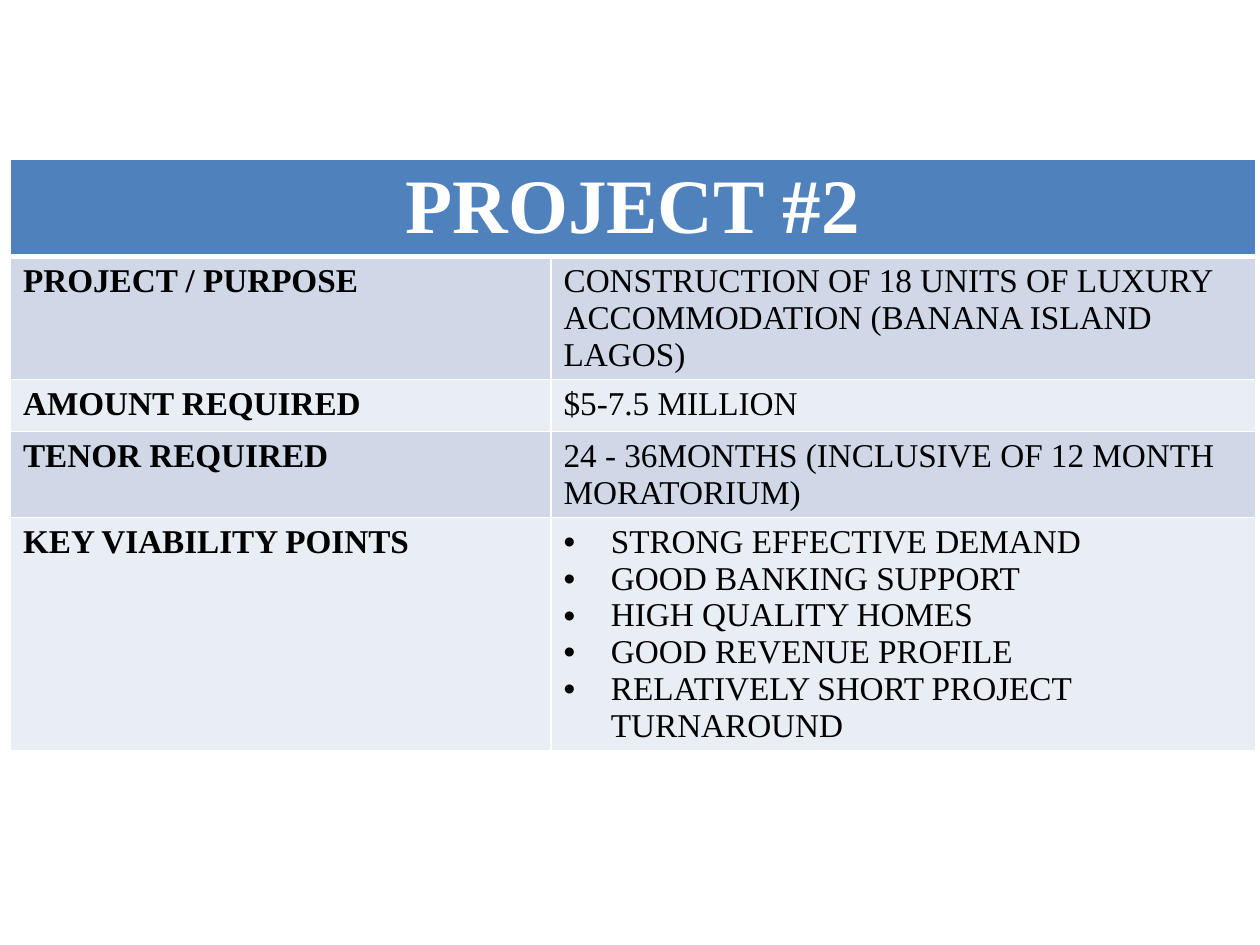
"""Build the PROJECT #2 summary table slide."""
import pptx
import pptx.dml.color
import pptx.enum.text
import pptx.oxml
import pptx.oxml.ns
import pptx.util

Pt = pptx.util.Pt


def color(value):
    return pptx.dml.color.RGBColor.from_string(value)


def style_cell(cell, lines, fill, size, bold, text_color, bottom=1):
    cell.fill.solid()
    cell.fill.fore_color.rgb = color(fill)
    cell.text = "\n".join(lines)
    for paragraph in cell.text_frame.paragraphs:
        paragraph.font.name = "Times New Roman"
        paragraph.font.size = Pt(size)
        paragraph.font.bold = bold
        paragraph.font.color.rgb = color(text_color)
    properties = cell._tc.get_or_add_tcPr()
    for index, (side, width) in enumerate([("L", 1), ("R", 1), ("T", 1), ("B", bottom)]):
        properties.insert(index, pptx.oxml.parse_xml(
            f'<a:ln{side} {pptx.oxml.ns.nsdecls("a")} w="{Pt(width)}"><a:solidFill>'
            f'<a:srgbClr val="FFFFFF"/></a:solidFill></a:ln{side}>'))


presentation = pptx.Presentation()
presentation.slide_width = Pt(720)
presentation.slide_height = Pt(540)
slide = presentation.slides.add_slide(presentation.slide_layouts[6])

project_rows = [
    ("PROJECT / PURPOSE", ["CONSTRUCTION OF 18 UNITS OF LUXURY ACCOMMODATION (BANANA ISLAND LAGOS)"]),
    ("AMOUNT REQUIRED", ["$5-7.5 MILLION"]),
    ("TENOR REQUIRED", ["24 - 36MONTHS (INCLUSIVE OF 12 MONTH MORATORIUM)"]),
    ("KEY VIABILITY POINTS", [
        "STRONG EFFECTIVE DEMAND",
        "GOOD BANKING SUPPORT",
        "HIGH QUALITY HOMES",
        "GOOD REVENUE PROFILE",
        "RELATIVELY SHORT PROJECT TURNAROUND",
    ]),
]
row_heights = [55.6, 70.2, 29.5, 49.2, 133.2]
column_widths = [308.9, 402.5]

table = slide.shapes.add_table(
    len(row_heights), 2, Pt(6), Pt(90.8), Pt(sum(column_widths)), Pt(sum(row_heights))).table
for row, height in zip(table.rows, row_heights):
    row.height = Pt(height)
for column, width in zip(table.columns, column_widths):
    column.width = Pt(width)

title_cell = table.cell(0, 0)
title_cell.merge(table.cell(0, 1))
style_cell(title_cell, ["PROJECT #2"], "4F81BD", 44, True, "FFFFFF", bottom=3)
title_cell.text_frame.paragraphs[0].alignment = pptx.enum.text.PP_ALIGN.CENTER

for number, (label, details) in enumerate(project_rows, start=1):
    fill = "D0D8E8" if number % 2 else "E9EDF4"
    style_cell(table.cell(number, 0), [label], fill, 19, True, "000000")
    style_cell(table.cell(number, 1), details, fill, 19, False, "000000")

for row in list(table.rows)[1:2]:
    for cell in row.cells:
        cell._tc.tcPr.find(pptx.oxml.ns.qn("a:lnT")).set("w", str(Pt(3)))

for paragraph in table.cell(len(project_rows), 1).text_frame.paragraphs:
    properties = paragraph._p.get_or_add_pPr()
    properties.set("marL", str(Pt(27)))
    properties.set("indent", str(-Pt(27)))
    for position, bullet in enumerate(['buFont typeface="Arial"', 'buChar char="•"']):
        properties.insert(position, pptx.oxml.parse_xml(
            f'<a:{bullet} {pptx.oxml.ns.nsdecls("a")}/>'))

presentation.save("out.pptx")
